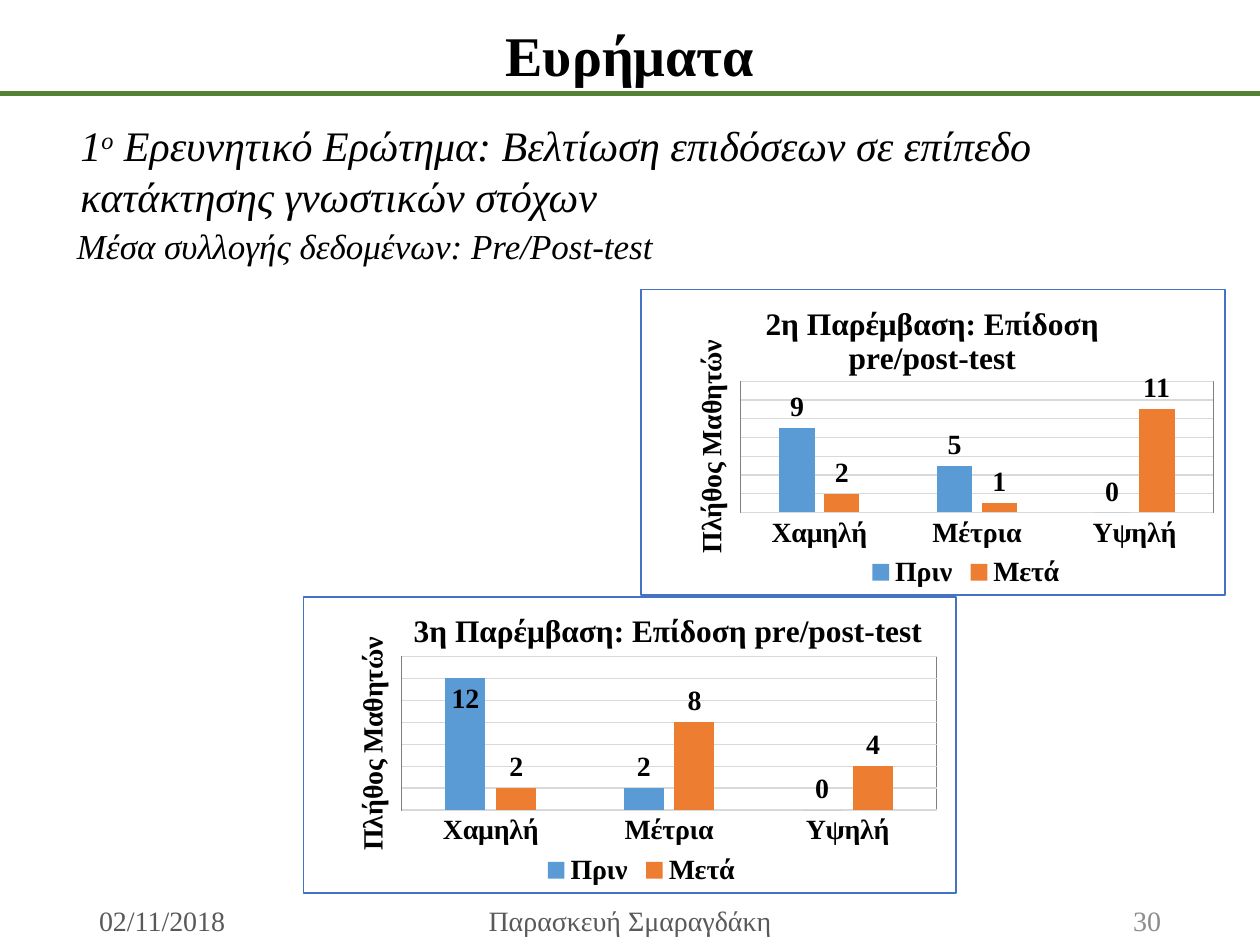
from lxml.etree import SubElement
from pptx import Presentation
from pptx.chart.data import CategoryChartData
from pptx.dml.color import RGBColor
from pptx.enum.chart import XL_CHART_TYPE as ChartType
from pptx.enum.chart import XL_LABEL_POSITION as LabelPosition
from pptx.enum.chart import XL_LEGEND_POSITION as LegendPosition
from pptx.enum.chart import XL_TICK_MARK as TickMark
from pptx.enum.shapes import MSO_CONNECTOR as Connector
from pptx.enum.text import MSO_ANCHOR as Anchor
from pptx.enum.text import PP_ALIGN as Align
from pptx.oxml import parse_xml
from pptx.oxml.ns import nsdecls, qn
from pptx.util import Pt

FONT = "Times New Roman"
COLORS = {
    "text": "000000", "footer": "595959", "number": "8C8C8C", "rule": "548235",
    "before": "5B9BD5", "after": "ED7D31", "grid": "D9D9D9",
    "border": "4472C4", "plot": "7F7F7F", "paper": "FFFFFF",
}
CATEGORIES = ["Χαμηλή", "Μέτρια", "Υψηλή"]


def color(name):
    """Return the named colour."""
    return RGBColor.from_string(COLORS[name])


def style_font(font, size, name="text", bold=False, italic=False):
    """Format one font."""
    font.name, font.size, font.bold, font.italic = FONT, Pt(size), bold, italic
    font.color.rgb = color(name)


def add_text(page, box, parts, size, name="text", align=Align.LEFT,
             anchor=Anchor.TOP, wrap=True, italic=False):
    """Add a text box holding one paragraph of runs and return its runs."""
    frame = page.shapes.add_textbox(*map(Pt, box)).text_frame
    frame.word_wrap, frame.vertical_anchor = wrap, anchor
    para = frame.paragraphs[0]
    para.alignment = align
    for part in parts:
        span = para.add_run()
        span.text = part
        style_font(span.font, size, name, italic=italic)
    return para.runs


def add_header(page, box):
    """Place the title and the rule under it."""
    left, top, width, height = box
    title = page.shapes.title
    title.left, title.top, title.width, title.height = map(Pt, box)
    frame = title.text_frame
    frame.text = "Ευρήματα"
    frame.vertical_anchor = Anchor.MIDDLE
    frame.paragraphs[0].alignment = Align.CENTER
    style_font(frame.paragraphs[0].runs[0].font, 32, bold=True)
    base = Pt(top + height - 0.7)
    rule = page.shapes.add_connector(
        Connector.STRAIGHT, Pt(left), base, Pt(left + width), base)
    rule.line.color.rgb, rule.line.width = color("rule"), Pt(3)
    SubElement(rule._element.spPr, qn("a:effectLst"))


def add_question(page, box):
    """Place the research question and the means of data collection."""
    left, top, width, height = box
    spans = add_text(
        page, (left, top, width, 65.5),
        ["1", "ο", " Ερευνητικό Ερώτημα: Βελτίωση επιδόσεων σε επίπεδο "
                   "κατάκτησης γνωστικών στόχων"], 24, italic=True)
    spans[1].font._element.set("baseline", "30000")
    add_text(page, (left - 2, top + height - 31.5, 358.5, 31.5),
             ["Μέσα συλλογής δεδομένων: Pre/Post-test"], 20,
             wrap=False, italic=True)


def place_part(element, index, x, y, size=None):
    """Give a chart part a manual layout in fractions of the chart."""
    for old in element.findall(qn("c:layout")):
        element.remove(old)
    layout = parse_xml(f"<c:layout {nsdecls('c')}/>")
    element.insert(index, layout)
    manual = SubElement(layout, qn("c:manualLayout"))
    values = {"xMode": "edge", "yMode": "edge", "x": x, "y": y}
    if size:
        values = {"layoutTarget": "inner", **values, "w": size[0], "h": size[1]}
    for tag, value in values.items():
        SubElement(manual, qn(f"c:{tag}")).set("val", str(value))


def shape_format(fill, line, width):
    """Return chart fill and outline properties."""
    paint = (f'<a:solidFill><a:srgbClr val="{COLORS[fill]}"/></a:solidFill>'
             if fill else "<a:noFill/>")
    return parse_xml(
        f"<c:spPr {nsdecls('c', 'a')}>{paint}"
        f'<a:ln w="{Pt(width)}"><a:solidFill><a:srgbClr val="{COLORS[line]}"/>'
        "</a:solidFill></a:ln></c:spPr>")


def add_title(owner, text, size, spot):
    """Write the title of a chart or an axis at a given spot."""
    title = owner.chart_title if hasattr(owner, "chart_title") else owner.axis_title
    title.text_frame.text = text
    style_font(title.text_frame.paragraphs[0].runs[0].font, size, bold=True)
    place_part(title._element, 1, *spot)
    return title


def add_scores(page, box, title, before, after, spots, plot):
    """Place a clustered column chart of scores before and after."""
    data = CategoryChartData()
    data.categories = CATEGORIES
    data.add_series("Πριν", before)
    data.add_series("Μετά", after)
    chart = page.shapes.add_chart(
        ChartType.COLUMN_CLUSTERED, *map(Pt, box), data).chart
    style_font(chart.font, 16, bold=True)
    add_title(chart, title, 18, spots["title"])

    chart.has_legend = True
    chart.legend.position = LegendPosition.BOTTOM
    chart.legend.include_in_layout = False
    style_font(chart.legend.font, 16, bold=True)
    place_part(chart.legend._element, 1, *spots["legend"])

    categories, values = chart.category_axis, chart.value_axis
    categories.major_tick_mark = TickMark.NONE
    style_font(categories.tick_labels.font, 16, bold=True)
    values.minimum_scale, values.maximum_scale, values.major_unit = 0, 14, 2
    values.visible = False
    for line in (categories.format.line, values.major_gridlines.format.line):
        line.color.rgb, line.width = color("grid"), Pt(0.75)
    axis_title = add_title(values, "Πλήθος Μαθητών", 16, spots["axis"])
    turn = axis_title.text_frame._txBody.find(qn("a:bodyPr"))
    turn.set("rot", "-5400000")
    turn.set("vert", "horz")

    bars = chart.plots[0]
    bars.gap_width, bars.overlap, bars.vary_by_categories = 219, -27, False
    for series, name in zip(bars.series, ("before", "after")):
        series.format.fill.solid()
        series.format.fill.fore_color.rgb = color(name)
        labels = series.data_labels
        labels.show_value, labels.position = True, LabelPosition.OUTSIDE_END
        style_font(labels.font, 16, bold=True)
        for index, value in enumerate(series.values):
            if value == 12:
                label = series.points[index].data_label
                style_font(label.font, 16, bold=True)
                label.position = LabelPosition.INSIDE_END

    root = chart._chartSpace
    area = root.chart.plotArea
    place_part(area, 0, *plot[:2], plot[2:])
    area.append(shape_format(None, "plot", 0.75))
    root.chart.addnext(shape_format("paper", "border", 1))


def add_footer(page, box):
    """Place the date, the author and the page number."""
    left, top, width, height = box
    items = [(0, 162, "02/11/2018", "footer", Align.LEFT),
             ((width - 243) / 2, 243, "Παρασκευή Σμαραγδάκη", "footer", Align.CENTER),
             (width - 162, 162, "30", "number", Align.RIGHT)]
    for offset, span, text, name, align in items:
        add_text(page, (left + offset, top, span, height), [text], 16, name,
                 align, Anchor.MIDDLE)


def main():
    """Build the slide and save the deck."""
    deck = Presentation()
    deck.slide_width, deck.slide_height = Pt(720), Pt(540)
    page = deck.slides.add_slide(deck.slide_layouts[5])
    add_header(page, (0, 8, 720, 46))
    add_question(page, (38.8, 64.8, 622, 91.4))
    add_scores(page, (366, 165, 334.5, 175.5), "2η Παρέμβαση: Επίδοση pre/post-test",
               (9, 5, 0), (2, 1, 11),
               {"title": (0.15, 0.03), "axis": (0.08, 0.15), "legend": (0.38, 0.87)},
               (0.17, 0.3, 0.81, 0.43))
    add_scores(page, (173, 340.8, 374, 170), "3η Παρέμβαση: Επίδοση pre/post-test",
               (12, 2, 0), (2, 8, 4),
               {"title": (0.16, 0.03), "axis": (0.07, 0.12), "legend": (0.36, 0.87)},
               (0.15, 0.2, 0.82, 0.52))
    add_footer(page, (49.5, 511.3, 621, 28.7))
    deck.save("out.pptx")


if __name__ == "__main__":
    main()
